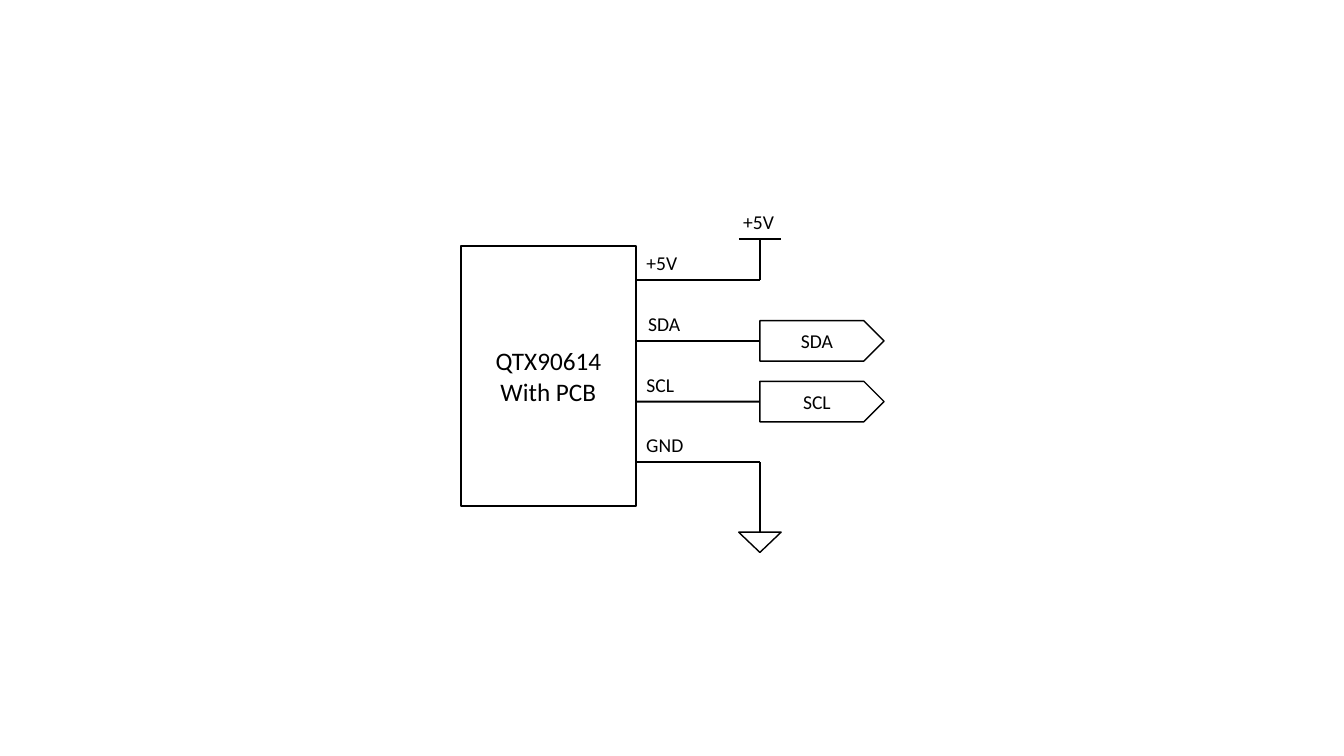
"""Draw the wiring of an infrared sensor board: supply, data, clock and ground."""
from pptx import Presentation
from pptx.dml.color import RGBColor
from pptx.enum.shapes import MSO_CONNECTOR, MSO_SHAPE
from pptx.enum.text import MSO_ANCHOR, MSO_AUTO_SIZE, PP_ALIGN
from pptx.oxml.ns import qn
from pptx.util import Cm, Pt
from lxml import etree

STRAIGHT = MSO_CONNECTOR.STRAIGHT
RECT, TAG, TRIANGLE = MSO_SHAPE.RECTANGLE, MSO_SHAPE.PENTAGON, MSO_SHAPE.ISOSCELES_TRIANGLE
MIDDLE, FIT = MSO_ANCHOR.MIDDLE, MSO_AUTO_SIZE.SHAPE_TO_FIT_TEXT
CENTER = PP_ALIGN.CENTER
LEFT_SIDE = 1


def color(value):
    return RGBColor.from_string(value)


class Schematic:
    font = "Calibri"
    ink = "000000"
    label_height = 0.86

    def __init__(self, slide):
        self.slide = slide

    def set_text(self, tf, text, size):
        p = tf.paragraphs[0]
        p.text = text
        p.alignment = CENTER
        p.font.name = self.font
        p.font.size = Pt(size)
        p.font.color.rgb = color(self.ink)

    def shape(self, kind, x, y, w, h, text="", size=14, line=1):
        sp = self.slide.shapes.add_shape(kind, Cm(x), Cm(y), Cm(w), Cm(h))
        sp.shadow.inherit = False
        sp.fill.background()
        sp.line.color.rgb = color(self.ink)
        sp.line.width = Pt(line)
        if text:
            sp.text_frame.vertical_anchor = MIDDLE
            self.set_text(sp.text_frame, text, size)
        return sp

    def wire(self, x1, y1, x2, y2):
        cx = self.slide.shapes.add_connector(STRAIGHT, Cm(x1), Cm(y1), Cm(x2), Cm(y2))
        cx.line.color.rgb = color(self.ink)
        cx.line.width = Pt(1.5)
        etree.SubElement(cx._element.spPr, qn("a:effectLst"))
        return cx

    def label(self, text, x, bottom, w):
        sp = self.slide.shapes.add_textbox(
            Cm(x), Cm(bottom - self.label_height), Cm(w), Cm(self.label_height))
        tf = sp.text_frame
        tf.word_wrap = False
        tf.auto_size = FIT
        self.set_text(tf, text, 14)


def main():
    prs = Presentation()
    prs.slide_width, prs.slide_height = Cm(33.87), Cm(19.05)
    s = Schematic(prs.slides.add_slide(prs.slide_layouts[6]))

    chip_x, chip_w = 11.61, 4.42
    pin_x, end_x = chip_x + chip_w, 19.15
    first_pin, pitch = 7.06, 1.53
    tag_w, tag_h = 3.13, 1.02
    rail_y, rail_half = 6.02, 0.53
    ground_y, ground_w, ground_h = 13.41, 1.07, 0.51

    s.shape(RECT, chip_x, 6.2, chip_w, 6.55, "QTX90614 With PCB", 18, 1.5)

    pins = [("+5V", 1.3, 0, False), ("SDA", 1.32, 0.05, True),
            ("SCL", 1.22, 0, True), ("GND", 1.45, 0, False)]
    for i, (name, width, shift, tagged) in enumerate(pins):
        y = first_pin + i * pitch
        wire = s.wire(pin_x, y, end_x, y)
        s.label(name, pin_x + shift, y, width)
        if tagged:
            tag = s.shape(TAG, end_x, y - tag_h / 2, tag_w, tag_h, name)
            wire.end_connect(tag, LEFT_SIDE)

    s.wire(end_x, rail_y, end_x, first_pin)
    s.wire(end_x - rail_half, rail_y, end_x + rail_half, rail_y)
    s.label("+5V", 18.47, rail_y, 1.3)

    s.wire(end_x, first_pin + 3 * pitch, end_x, ground_y)
    ground = s.shape(TRIANGLE, end_x - ground_w / 2, ground_y, ground_w, ground_h)
    ground.rotation = 180

    prs.save("out.pptx")


if __name__ == "__main__":
    main()
